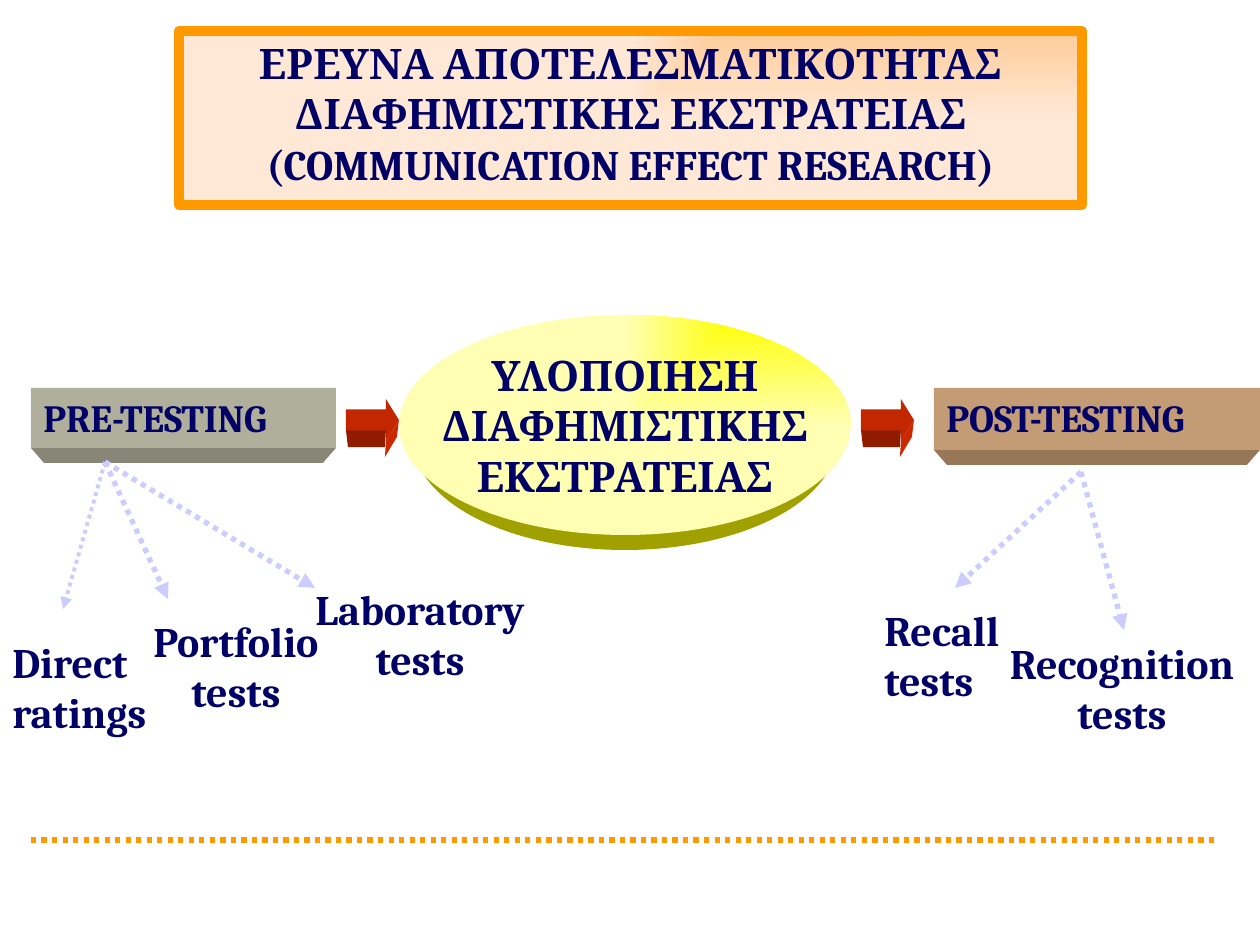
from lxml.etree import SubElement
from pptx import Presentation
from pptx.dml.color import RGBColor
from pptx.enum.dml import MSO_LINE
from pptx.enum.shapes import MSO_CONNECTOR, MSO_SHAPE
from pptx.enum.text import MSO_ANCHOR, MSO_AUTO_SIZE, PP_ALIGN
from pptx.oxml.ns import qn
from pptx.util import Emu, Pt

EMU_PER_PX = 914400 / 126
NAVY, ORANGE, LAVENDER = "000066", "FF9900", "CCCCFF"


def px(value):
    return Emu(round(value * EMU_PER_PX))


def color(hex_string):
    return RGBColor.from_string(hex_string)


class SlideBuilder:
    font_name = "Cambria"

    def __init__(self, slide):
        self.slide = slide

    def set_text(self, shape, text, size=24, align=PP_ALIGN.LEFT,
                 anchor=MSO_ANCHOR.TOP, wrap=True):
        frame = shape.text_frame
        frame.text = text
        frame.auto_size = MSO_AUTO_SIZE.NONE
        frame.word_wrap = wrap
        frame.vertical_anchor = anchor
        for paragraph in frame.paragraphs:
            paragraph.alignment = align
            for run in paragraph.runs:
                run.font.name = self.font_name
                run.font.size = Pt(size)
                run.font.bold = True
                run.font.color.rgb = color(NAVY)

    def paint(self, shape, fill):
        shape.shadow.inherit = False
        shape.fill.solid()
        shape.fill.fore_color.rgb = color(fill)
        shape.line.fill.background()

    def corner_gradient(self, shape, inner, outer):
        """Fill with a rectangular gradient that starts in the top right corner."""
        shape.fill.gradient()
        for stop, shade in zip(shape.fill.gradient_stops, (inner, outer)):
            stop.color.rgb = color(shade)
        gradient = shape._element.spPr.find(qn("a:gradFill"))
        gradient.remove(gradient.find(qn("a:lin")))
        rectangle = SubElement(gradient, qn("a:path"), {"path": "rect"})
        SubElement(rectangle, qn("a:fillToRect"), {"l": "100000", "b": "100000"})

    def title(self, text, left, top, width, height):
        title = self.slide.shapes.title
        title.left, title.top = px(left), px(top)
        title.width, title.height = px(width), px(height)
        self.corner_gradient(title, "FFCC99", "FFE8D6")
        title.line.color.rgb = color(ORANGE)
        title.line.width = Pt(6)
        self.set_text(title, text, align=PP_ALIGN.CENTER)

    def shape(self, kind, left, top, width, height, fill):
        shape = self.slide.shapes.add_shape(
            kind, px(left), px(top), px(width), px(height))
        self.paint(shape, fill)
        return shape

    def polygon(self, points, fill):
        builder = self.slide.shapes.build_freeform(*points[0], scale=EMU_PER_PX)
        builder.add_line_segments(points[1:], close=True)
        self.paint(builder.convert_to_shape(), fill)

    def bar(self, text, left, width, height, front, side):
        """Labelled bar with a bevelled face below it."""
        top, inset, depth = 388, 13, 15
        right, bottom = left + width, top + height
        self.polygon([(left, bottom), (right, bottom),
                      (right - inset, bottom + depth),
                      (left + inset, bottom + depth)], side)
        bar = self.shape(MSO_SHAPE.RECTANGLE, left, top, width, height, front)
        self.set_text(bar, text, size=22)

    def oval(self, text, left, top, width, height):
        """Yellow ellipse with a darker rim below it."""
        inset, depth = 14, 15
        self.shape(MSO_SHAPE.OVAL, left + inset, top + depth,
                   width - 2 * inset, height, "A0A000")
        oval = self.shape(MSO_SHAPE.OVAL, left, top, width, height, "FFFF00")
        self.corner_gradient(oval, "FFFF00", "FFFFB4")
        self.set_text(oval, text, align=PP_ALIGN.CENTER,
                      anchor=MSO_ANCHOR.MIDDLE, wrap=False)

    def block_arrow(self, left):
        """Red arrow whose shaft and head have thickness below."""
        top, width, height, head = 399, 53, 42, 13
        right, neck = left + width, left + width - head
        self.polygon([(left, 430), (neck, 430), (neck - 1, 447),
                      (left + 2, 447)], "901C00")
        self.polygon([(neck, top + height), (right, 420), (right - 2, 437),
                      (neck - 1, 457)], "CC2900")
        arrow = self.shape(MSO_SHAPE.RIGHT_ARROW, left, top, width, height, "C22700")
        arrow.adjustments[0], arrow.adjustments[1] = 0.5, 0.31

    def dotted_line(self, start, end, stroke, width=3, arrow=False):
        connector = self.slide.shapes.add_connector(
            MSO_CONNECTOR.STRAIGHT, *map(px, start + end))
        connector.line.color.rgb = color(stroke)
        connector.line.width = Pt(width)
        connector.line.dash_style = MSO_LINE.ROUND_DOT
        properties = connector._element.spPr
        if arrow:
            SubElement(properties.find(qn("a:ln")), qn("a:tailEnd"),
                       {"type": "triangle"})
        SubElement(properties, qn("a:effectLst"))

    def label(self, text, left, top, width, align=PP_ALIGN.CENTER):
        box = self.slide.shapes.add_textbox(px(left), px(top), px(width), px(113))
        self.set_text(box, text, align=align)


def main():
    presentation = Presentation()
    presentation.slide_width, presentation.slide_height = px(1260), px(945)
    slide = presentation.slides.add_slide(presentation.slide_layouts[5])
    builder = SlideBuilder(slide)

    builder.title("ΕΡΕΥΝΑ ΑΠΟΤΕΛΕΣΜΑΤΙΚΟΤΗΤΑΣ ΔΙΑΦΗΜΙΣΤΙΚΗΣ ΕΚΣΤΡΑΤΕΙΑΣ "
                  "(COMMUNICATION EFFECT RESEARCH)", 179, 31, 903, 174)
    builder.bar("PRE-TESTING", 31, 305, 60, "AFAF9B", "878677")
    builder.bar("POST-TESTING", 934, 326, 62, "C39B75", "967758")
    builder.oval("ΥΛΟΠΟΙΗΣΗ\nΔΙΑΦΗΜΙΣΤΙΚΗΣ\nΕΚΣΤΡΑΤΕΙΑΣ", 399, 315, 452, 220)

    pre_testing, post_testing = (105, 462), (1081, 472)
    for start, end, width in (
        (pre_testing, (63, 609), 2.25),
        (pre_testing, (168, 599), 3),
        (pre_testing, (315, 588), 3),
        (post_testing, (955, 588), 3),
        (post_testing, (1124, 630), 3),
    ):
        builder.dotted_line(start, end, LAVENDER, width, arrow=True)

    builder.label("Direct ratings", 0, 630, 174, PP_ALIGN.LEFT)
    builder.label("Portfolio tests", 115, 609, 242)
    builder.label("Laboratory tests", 294, 577, 252)
    builder.label("Recall tests", 872, 598, 158, PP_ALIGN.LEFT)
    builder.label("Recognition tests", 984, 631, 276)

    for left in (346, 861):
        builder.block_arrow(left)
    builder.dotted_line((31, 840), (1218, 840), ORANGE)

    presentation.save("out.pptx")


if __name__ == "__main__":
    main()
